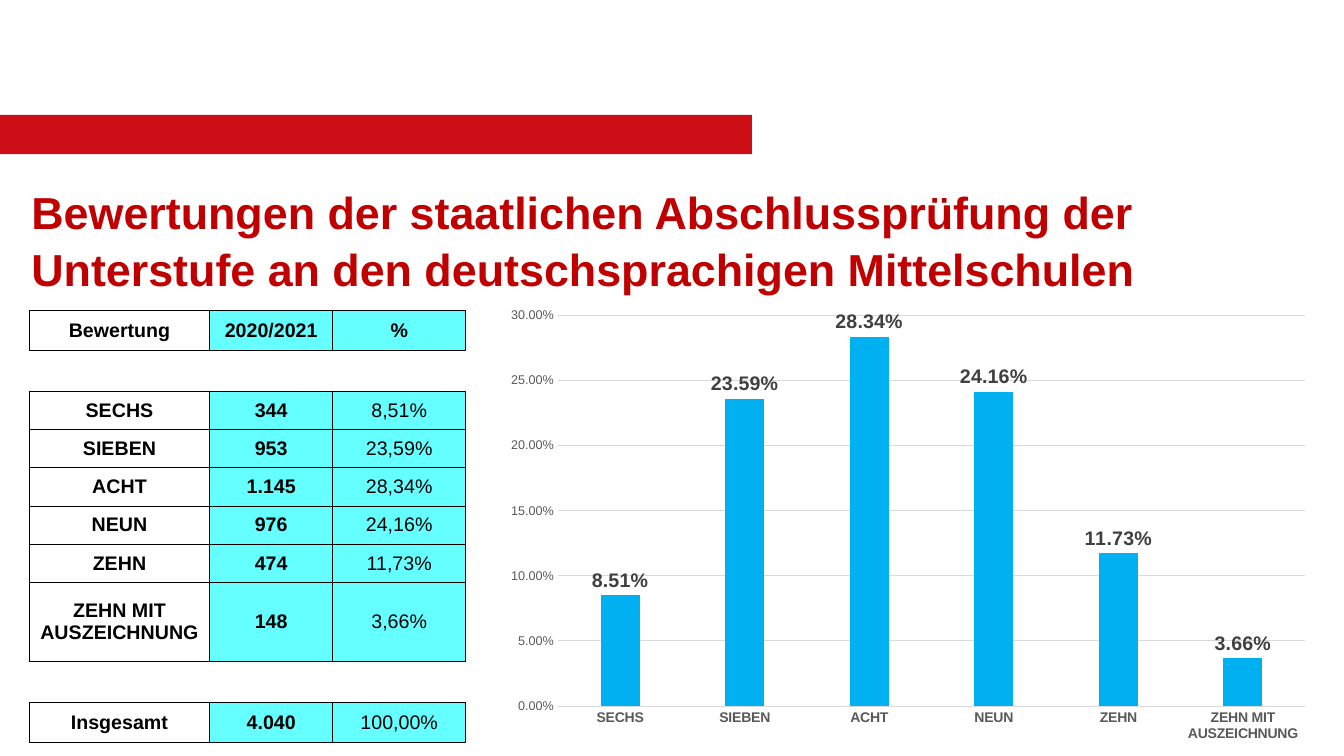
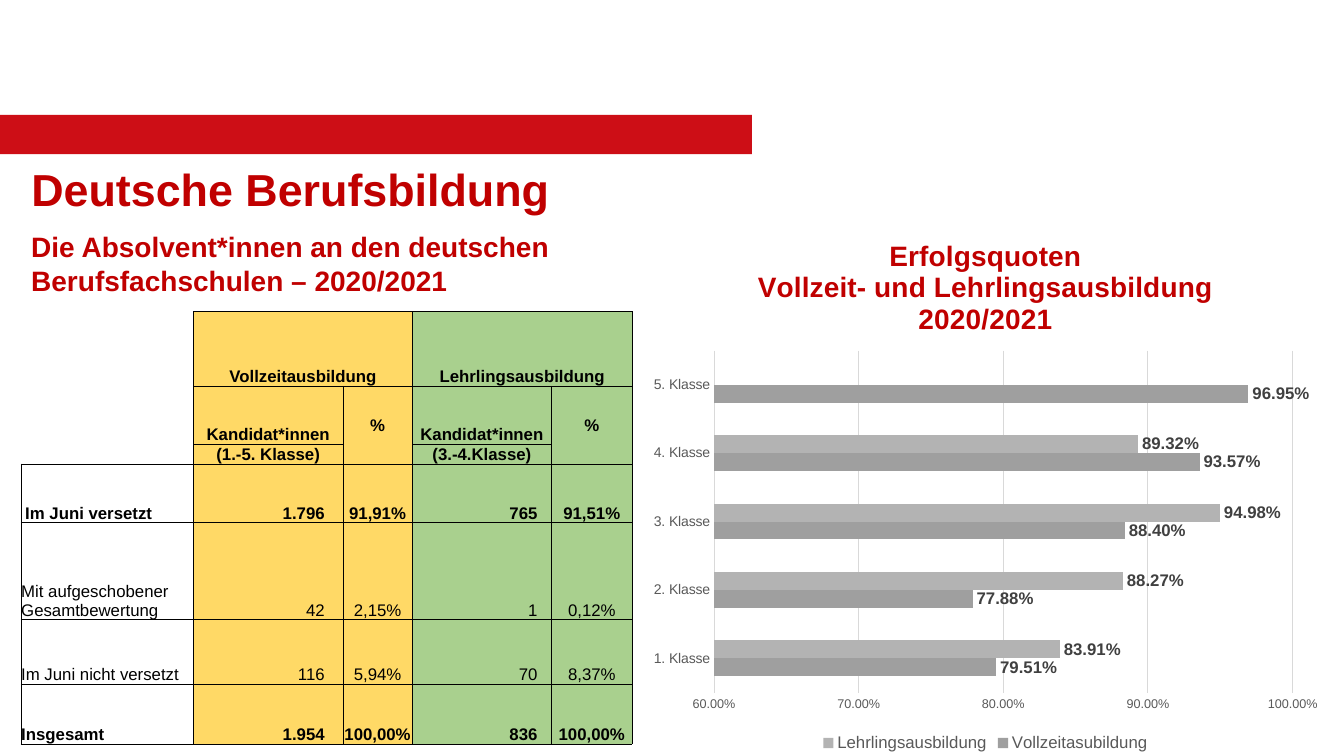
from lxml import etree
from pptx import Presentation
from pptx.chart.data import CategoryChartData
from pptx.dml.color import RGBColor
from pptx.enum.chart import XL_CHART_TYPE, XL_LABEL_POSITION, XL_LEGEND_POSITION, XL_TICK_MARK
from pptx.enum.shapes import MSO_SHAPE
from pptx.enum.text import MSO_ANCHOR, PP_ALIGN
from pptx.oxml.ns import qn
from pptx.util import Inches, Pt

FONT = "Arial"
BAND_RED = RGBColor(0xCD, 0x0E, 0x16)
TITLE_RED = RGBColor(0xC0, 0x00, 0x00)
BLACK = RGBColor(0x00, 0x00, 0x00)
CYAN = RGBColor(0x66, 0xFF, 0xFF)
YELLOW = RGBColor(0xFF, 0xD9, 0x66)
GREEN = RGBColor(0xA9, 0xD0, 0x8E)
BLUE = RGBColor(0x00, 0xB0, 0xF0)
AXIS_GREY = RGBColor(0x59, 0x59, 0x59)
LABEL_GREY = RGBColor(0x40, 0x40, 0x40)
GRID_GREY = RGBColor(0xD9, 0xD9, 0xD9)
DARK_BAR = RGBColor(0x9F, 0x9F, 0x9F)
LIGHT_BAR = RGBColor(0xB3, 0xB3, 0xB3)

SLIDE_W, SLIDE_H = Inches(13.33), Inches(7.5)
NO_STYLE = "{2D5ABB26-0587-4C30-8999-92F81FD0307C}"
PERCENT = "0.00%"

GRADES = [
    ("Bewertung", "2020/2021", "%"),
    ("", "", ""),
    ("SECHS", "344", "8,51%"),
    ("SIEBEN", "953", "23,59%"),
    ("ACHT", "1.145", "28,34%"),
    ("NEUN", "976", "24,16%"),
    ("ZEHN", "474", "11,73%"),
    ("ZEHN MIT AUSZEICHNUNG", "148", "3,66%"),
    ("", "", ""),
    ("Insgesamt", "4.040", "100,00%"),
]
GRADE_SHARES = [0.0851, 0.2359, 0.2834, 0.2416, 0.1173, 0.0366]

GRADUATES = [
    ("", "Vollzeitausbildung", "", "Lehrlingsausbildung", ""),
    ("", "Kandidat*innen", "%", "Kandidat*innen", "%"),
    ("", "(1.-5. Klasse)", "", "(3.-4.Klasse)", ""),
    ("Im Juni versetzt", "1.796", "91,91%", "765", "91,51%"),
    ("Mit aufgeschobener Gesamtbewertung", "42", "2,15%", "1", "0,12%"),
    ("Im Juni nicht versetzt", "116", "5,94%", "70", "8,37%"),
    ("Insgesamt", "1.954", "100,00%", "836", "100,00%"),
]
CLASSES = [f"{n}. Klasse" for n in range(1, 6)]
FULL_TIME = [0.7951, 0.7788, 0.884, 0.9357, 0.9695]
APPRENTICE = [0.8391, 0.8827, 0.9498, 0.8932, None]


def area(x, y, w, h):
    """Turn percentages of the slide into left, top, width and height."""
    return (int(SLIDE_W * x / 100), int(SLIDE_H * y / 100),
            int(SLIDE_W * w / 100), int(SLIDE_H * h / 100))


def style_font(font, size, color, bold=False):
    """Apply the deck's typeface with a size, colour and weight."""
    font.name, font.size, font.bold = FONT, Pt(size), bold
    font.color.rgb = color


def add_band(slide, layout):
    """Draw the red band and hand it over to the shared layout."""
    sp = slide.shapes.add_shape(MSO_SHAPE.RECTANGLE, *area(0, 15.2, 55.95, 5.2))
    sp.shadow.inherit = False
    sp.fill.solid()
    sp.fill.fore_color.rgb = BAND_RED
    sp.line.fill.background()
    layout.shapes.element.insert(2, sp.element)


def write_heading(sp, box, text, size, spacing):
    """Place a red heading in its box."""
    sp.left, sp.top, sp.width, sp.height = box
    tf = sp.text_frame
    tf.text = text
    tf.word_wrap = True
    tf.vertical_anchor = MSO_ANCHOR.MIDDLE
    p = tf.paragraphs[0]
    p.alignment = PP_ALIGN.LEFT
    p.line_spacing = spacing
    style_font(p.runs[0].font, size, TITLE_RED, True)


def set_borders(cell, widths):
    """Draw black cell borders from a mapping of sides to point widths."""
    tc_pr = cell._tc.get_or_add_tcPr()
    for side in "LRTB":
        if side in widths:
            ln = etree.SubElement(tc_pr, qn(f"a:ln{side}"), w=str(Pt(widths[side])))
            fill = etree.SubElement(ln, qn("a:solidFill"))
            etree.SubElement(fill, qn("a:srgbClr"), val=str(BLACK))


def add_plain_table(slide, box, rows, col_weights, row_weights):
    """Add an unstyled table whose columns and rows share out its box."""
    table = slide.shapes.add_table(len(rows), len(rows[0]), *box).table
    table._tbl.tblPr.find(qn("a:tableStyleId")).text = NO_STYLE
    table.first_row = table.horz_banding = False
    for col, weight in zip(table.columns, col_weights):
        col.width = int(box[2] * weight / sum(col_weights))
    for row, weight in zip(table.rows, row_weights):
        row.height = int(box[3] * weight / sum(row_weights))
    return table


def fill_cell(cell, text, size, bold, align, anchor, color, widths):
    """Write and format one table cell."""
    set_borders(cell, widths)
    if color is None:
        cell.fill.background()
    else:
        cell.fill.solid()
        cell.fill.fore_color.rgb = color
    cell.margin_left = cell.margin_right = cell.margin_top = cell.margin_bottom = 0
    cell.vertical_anchor = anchor
    cell.text = text
    p = cell.text_frame.paragraphs[0]
    p.alignment = align
    style_font(p.font, size, BLACK, bold)
    for r in p.runs:
        style_font(r.font, size, BLACK, bold)


def add_grade_table(slide, box):
    """Add the table of grades with gaps after its head and before its total."""
    heights = [0.4, 0.4] + [0.38] * 5 + [0.78, 0.41, 0.4]
    table = add_plain_table(slide, box, GRADES, [1.79, 1.22, 1.32], heights)
    for r, row in enumerate(GRADES):
        for c, text in enumerate(row):
            widths = {"T": 1 if r in (0, 1, 2, 8, 9) else 0.5,
                      "B": 1 if r in (0, 1, 7, 8, 9) else 0.5}
            if text:
                widths["L"] = 0.5 if c == 2 else 1
                widths["R"] = 0.5 if c == 1 else 1
            fill_cell(table.cell(r, c), text, 14, c < 2 or r == 0, PP_ALIGN.CENTER,
                      MSO_ANCHOR.MIDDLE, CYAN if text and c else None, widths)


def graduate_sides(r, c):
    """Tell which sides of a graduate table cell carry a line."""
    if c == 0 and r < 3:
        return "RB" if r == 2 else "R"
    return {1: "LRT", 2: "LRB"}.get(r, "LRTB")


def add_graduate_table(slide, box):
    """Add the table of graduates with full-time and apprentice columns."""
    table = add_plain_table(slide, box, GRADUATES, [1.71, 1.48, 0.69, 1.38, 0.8],
                            [0.74, 0.57, 0.19, 0.58, 0.96, 0.64, 0.59])
    colors = [None, YELLOW, YELLOW, GREEN, GREEN]
    number_margins = {1: Inches(0.18), 3: Inches(0.14)}
    for r, row in enumerate(GRADUATES):
        for c, text in enumerate(row):
            is_number = r > 2 and c in number_margins
            align = PP_ALIGN.RIGHT if is_number else PP_ALIGN.CENTER if c else PP_ALIGN.LEFT
            anchor = MSO_ANCHOR.MIDDLE if text == "%" else MSO_ANCHOR.BOTTOM
            cell = table.cell(r, c)
            fill_cell(cell, text, 12, r not in (4, 5), align, anchor, colors[c],
                      dict.fromkeys(graduate_sides(r, c), 0.5))
            if is_number:
                cell.margin_right = number_margins[c]
    table.cell(3, 0).margin_left = Inches(0.04)
    for first, last in [((0, 1), (0, 2)), ((0, 3), (0, 4)),
                        ((1, 0), (2, 0)), ((1, 2), (2, 2)), ((1, 4), (2, 4))]:
        table.cell(*first).merge(table.cell(*last))


def set_plot_area(chart, x, y, w, h):
    """Fix the inner plot area as shares of the chart."""
    plot_area = chart._chartSpace.chart.plotArea
    for old in plot_area.findall(qn("c:layout")):
        plot_area.remove(old)
    layout = etree.Element(qn("c:layout"))
    manual = etree.SubElement(layout, qn("c:manualLayout"))
    for tag, val in [("layoutTarget", "inner"), ("xMode", "edge"), ("yMode", "edge"),
                     ("x", x), ("y", y), ("w", w), ("h", h)]:
        etree.SubElement(manual, qn(f"c:{tag}"), val=str(val))
    plot_area.insert(0, layout)


def add_percent_chart(slide, box, kind, cats, series, gap, label_size, bold_cats):
    """Add a bar chart of percentages; series holds name, values and colour."""
    data = CategoryChartData(number_format=PERCENT)
    data.categories = cats
    for name, vals, _ in series:
        data.add_series(name, vals)
    chart = slide.shapes.add_chart(kind, *box, data).chart
    style_font(chart.font, 10, BLACK)
    chart.has_title = chart.has_legend = False
    plot = chart.plots[0]
    plot.vary_by_categories = False
    plot.gap_width = gap
    for ser, (_, _, color) in zip(plot.series, series):
        ser.format.fill.solid()
        ser.format.fill.fore_color.rgb = color
        ser.invert_if_negative = False
        labels = ser.data_labels
        labels.show_value = True
        labels.number_format, labels.number_format_is_linked = PERCENT, False
        labels.position = XL_LABEL_POSITION.OUTSIDE_END
        style_font(labels.font, label_size, LABEL_GREY, True)
    cat_axis, val_axis = chart.category_axis, chart.value_axis
    for axis in (cat_axis, val_axis):
        axis.major_tick_mark = axis.minor_tick_mark = XL_TICK_MARK.NONE
    style_font(cat_axis.tick_labels.font, 10, AXIS_GREY, bold_cats)
    style_font(val_axis.tick_labels.font, 9, AXIS_GREY)
    val_axis.tick_labels.number_format = PERCENT
    val_axis.tick_labels.number_format_is_linked = False
    val_axis.format.line.fill.background()
    val_axis.has_major_gridlines = True
    for line in (cat_axis.format.line, val_axis.major_gridlines.format.line):
        line.color.rgb = GRID_GREY
        line.width = Pt(0.75)
    return chart


def add_grade_chart(slide, box):
    """Add the column chart of grades."""
    cats = [row[0] for row in GRADES[2:8]]
    chart = add_percent_chart(slide, box, XL_CHART_TYPE.COLUMN_CLUSTERED, cats,
                              [("Series 1", GRADE_SHARES, BLUE)], 219, 14, True)
    chart.plots[0].overlap = -27
    chart.value_axis.minimum_scale, chart.value_axis.maximum_scale = 0, 0.3
    chart.value_axis.major_unit = 0.05
    set_plot_area(chart, 0.076, 0.038, 0.902, 0.863)


def add_success_chart(slide, box):
    """Add the bar chart of success rates with its title and legend."""
    chart = add_percent_chart(slide, box, XL_CHART_TYPE.BAR_CLUSTERED, CLASSES,
                              [("Vollzeitasubildung", FULL_TIME, DARK_BAR),
                               ("Lehrlingsausbildung", APPRENTICE, LIGHT_BAR)], 182, 12, False)
    axis = chart.value_axis
    axis.minimum_scale, axis.maximum_scale, axis.major_unit = 0.6, 1, 0.1
    chart.has_title = True
    tf = chart.chart_title.text_frame
    tf.text = "Erfolgsquoten\nVollzeit- und Lehrlingsausbildung 2020/2021"
    for p in tf.paragraphs:
        style_font(p.font, 20, TITLE_RED, True)
        style_font(p.runs[0].font, 20, TITLE_RED, True)
    chart.has_legend = True
    chart.legend.position = XL_LEGEND_POSITION.BOTTOM
    chart.legend.include_in_layout = False
    style_font(chart.legend.font, 12, AXIS_GREY)
    set_plot_area(chart, 0.107, 0.244, 0.838, 0.638)


def build_grades(slide):
    """Fill the slide on final examination grades."""
    write_heading(slide.shapes.title, area(1.58, 22.13, 96.85, 18.93),
                  "Bewertungen der staatlichen Abschlussprüfung der Unterstufe "
                  "an den deutschsprachigen Mittelschulen", 32, 1.05)
    add_grade_table(slide, area(2.18, 41.07, 32.48, 57.2))
    add_grade_chart(slide, area(36.83, 39.47, 61.65, 59.87))


def build_vocational(slide):
    """Fill the slide on vocational training."""
    write_heading(slide.shapes.title, area(1.58, 21.6, 43.13, 6.27),
                  "Deutsche Berufsbildung", 32, 1.05)
    box = area(1.58, 29.4, 43.13, 10.67)
    write_heading(slide.shapes.add_textbox(*box), box,
                  "Die Absolvent*innen an den deutschen Berufsfachschulen – 2020/2021", 20, 1.02)
    add_graduate_table(slide, area(1.58, 41.2, 45.46, 57.07))
    add_success_chart(slide, area(47.63, 29.07, 51.38, 70.93))


def main():
    """Build and save the presentation."""
    prs = Presentation()
    prs.slide_width, prs.slide_height = SLIDE_W, SLIDE_H
    layout = prs.slide_layouts[5]
    slides = [prs.slides.add_slide(layout) for _ in range(2)]
    add_band(slides[0], layout)
    for build, slide in zip((build_grades, build_vocational), slides):
        build(slide)
    prs.save("out.pptx")


if __name__ == "__main__":
    main()
